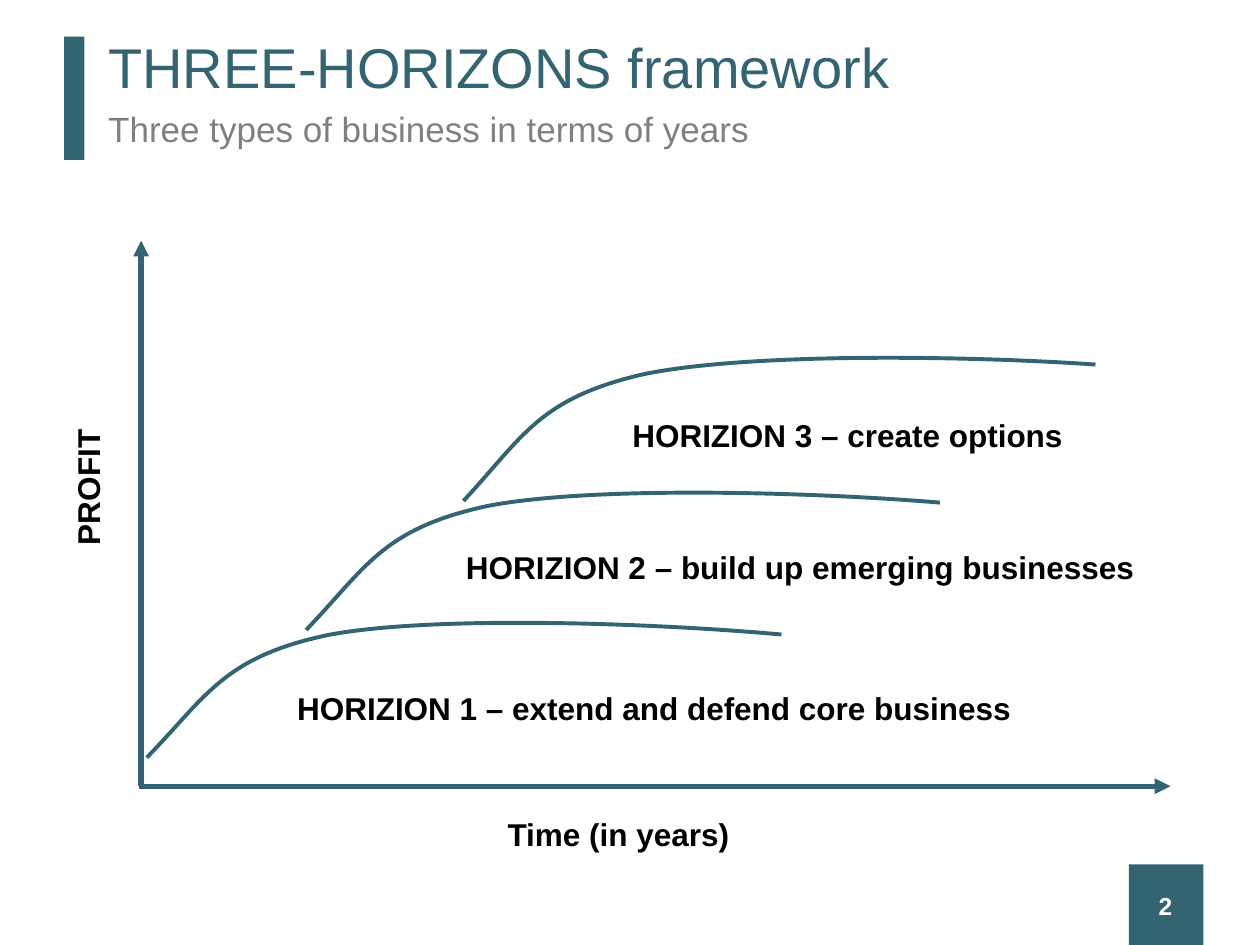
from lxml import etree
from pptx import Presentation
from pptx import util as u
from pptx.dml.color import RGBColor
from pptx.enum import shapes, text
from pptx.oxml.ns import qn

COLORS = {"teal": "336471", "gray": "808080", "black": "000000", "white": "FFFFFF"}
FONT = "Arial"
CURVE_WIDTH, CURVE_HEIGHT = 5.09, 0.91
CURVE_BEZIERS = [
    ((0.51, 0.45), (0.66, 0.15), (1.51, 0.03)),
    ((2.35, -0.07), (4.06, 0.1), (5.09, 0.26)),
]


class HorizonSlide:
    def __init__(self, presentation):
        self.slide = presentation.slides.add_slide(presentation.slide_layouts[5])
        self.shapes = self.slide.shapes

    def color(self, name):
        return RGBColor.from_string(COLORS[name])

    def format_text(self, shape, content, size, color, bold=False, align=None, spacing=None):
        frame = shape.text_frame
        frame.text = content
        paragraph = frame.paragraphs[0]
        paragraph.alignment = align or text.PP_ALIGN.LEFT
        if spacing:
            paragraph.line_spacing = spacing
        font = paragraph.runs[0].font
        font.name, font.size, font.bold = FONT, u.Pt(size), bold
        font.color.rgb = self.color(color)

    def title(self, content, left, top, width, height):
        shape = self.shapes.title
        shape.left, shape.top = u.Inches(left), u.Inches(top)
        shape.width, shape.height = u.Inches(width), u.Inches(height)
        shape.text_frame.auto_size = text.MSO_AUTO_SIZE.NONE
        shape.text_frame.vertical_anchor = text.MSO_ANCHOR.MIDDLE
        self.format_text(shape, content, 32, "teal", spacing=0.9)

    def text_box(self, content, left, top, width, height, size, color, **style):
        box = self.shapes.add_textbox(*map(u.Inches, (left, top, width, height)))
        box.text_frame.word_wrap = True
        self.format_text(box, content, size, color, **style)
        return box

    def label(self, content, left, top, width, rotation=0):
        box = self.text_box(content, left, top, width, 0.4, 18, "black", bold=True)
        box.text_frame.word_wrap = False
        box.text_frame.auto_size = text.MSO_AUTO_SIZE.SHAPE_TO_FIT_TEXT
        box.rotation = rotation

    def block(self, left, top, width, height):
        shape = self.shapes.add_shape(
            shapes.MSO_SHAPE.RECTANGLE, *map(u.Inches, (left, top, width, height)))
        shape.shadow.inherit = False
        shape.fill.solid()
        shape.fill.fore_color.rgb = self.color("teal")
        shape.line.fill.background()

    def axis(self, tip, end):
        line = self.shapes.add_connector(
            shapes.MSO_CONNECTOR.STRAIGHT, *map(u.Inches, (*tip, *end)))
        line.line.color.rgb = self.color("teal")
        line.line.width = u.Pt(3)
        etree.SubElement(line.line._get_or_add_ln(), qn("a:headEnd"), type="triangle")
        etree.SubElement(line._element.spPr, qn("a:effectLst"))

    def curve(self, left, top, rotation):
        builder = self.shapes.build_freeform(u.Inches(left), u.Inches(top + CURVE_HEIGHT))
        builder.add_line_segments(
            [(u.Inches(left + CURVE_WIDTH), u.Inches(top))], close=False)
        shape = builder.convert_to_shape()
        outline = shape._element.find(".//" + qn("a:path"))
        outline.remove(outline.find(qn("a:lnTo")))
        for bezier in CURVE_BEZIERS:
            segment = etree.SubElement(outline, qn("a:cubicBezTo"))
            for x, y in bezier:
                etree.SubElement(segment, qn("a:pt"), x=str(u.Inches(x)), y=str(u.Inches(y)))
        shape.shadow.inherit = False
        shape.fill.background()
        shape.line.color.rgb = self.color("teal")
        shape.line.width = u.Pt(2.25)
        shape.rotation = rotation


def main():
    presentation = Presentation()
    presentation.slide_width, presentation.slide_height = u.Inches(10), u.Inches(7.5)
    page = HorizonSlide(presentation)

    page.block(0.51, 0.29, 0.16, 0.98)
    page.block(8.96, 6.86, 0.59, 0.64)
    page.title("THREE-HORIZONS framework", 0.76, 0.3, 8.74, 0.52)
    page.text_box("Three types of business in terms of years",
                  0.76, 0.84, 6.85, 0.43, 20, "gray", spacing=0.9)
    number = page.text_box("2", 8.96, 6.99, 0.58, 0.39, 14, "white",
                           bold=True, align=text.PP_ALIGN.CENTER)
    number.text_frame.vertical_anchor = text.MSO_ANCHOR.MIDDLE

    page.axis((1.12, 1.91), (1.12, 6.24))
    page.label("PROFIT", 0.13, 3.66, 1.13, rotation=270)
    page.axis((9.29, 6.24), (1.1, 6.24))
    page.label("Time (in years)", 3.93, 6.42, 1.98)

    for left, top, rotation in [(2.39, 3.91, 355.9), (1.13, 4.94, 356.3), (3.63, 2.85, 355.1)]:
        page.curve(left, top, rotation)
    for content, left, top, width in [
        ("HORIZION 1 – extend and defend core business", 2.26, 5.42, 5.92),
        ("HORIZION 2 – build up emerging businesses", 3.6, 4.3, 5.56),
        ("HORIZION 3 – create options", 4.92, 3.25, 3.65),
    ]:
        page.label(content, left, top, width)

    presentation.save("out.pptx")


if __name__ == "__main__":
    main()
